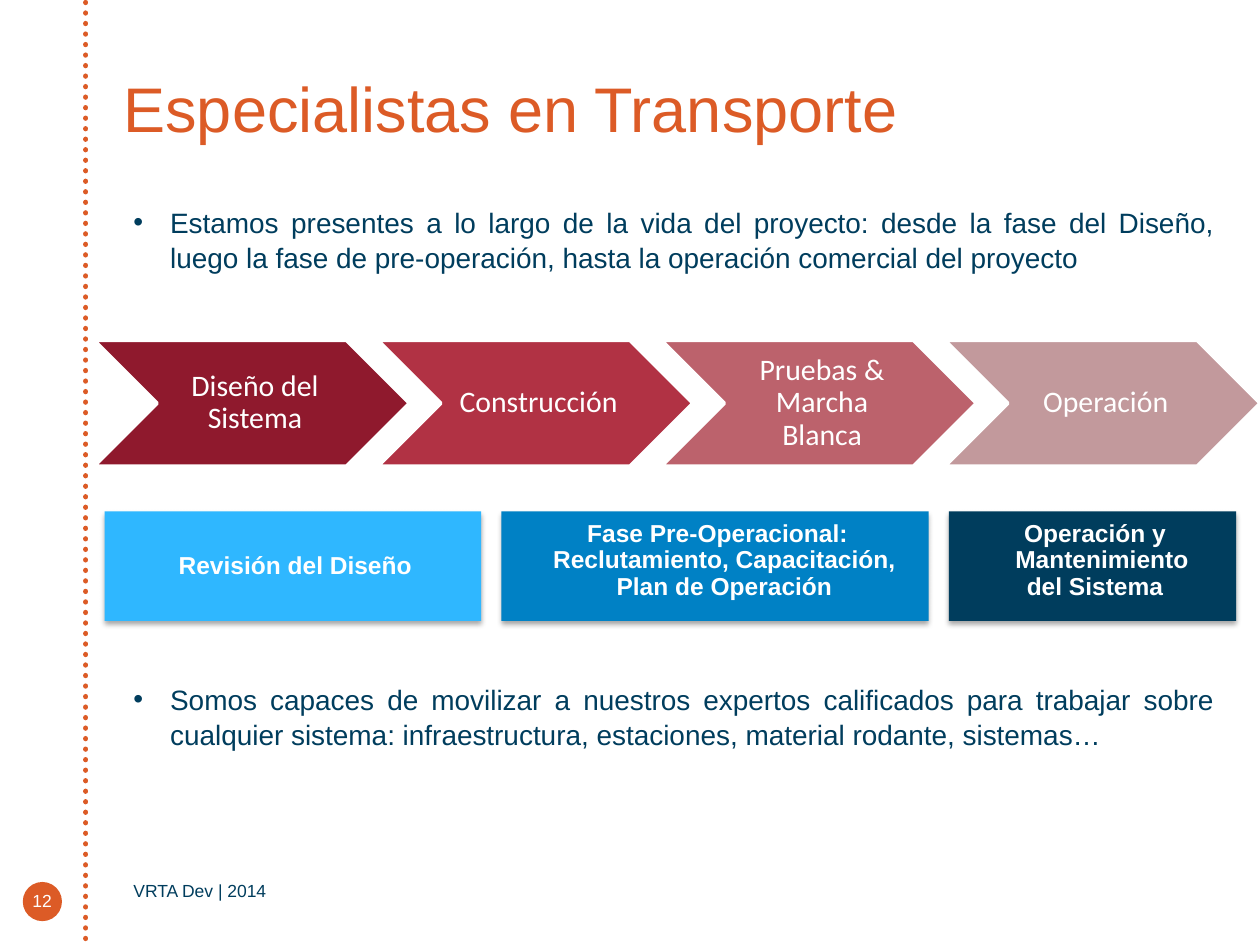
from lxml import etree
from pptx import Presentation
from pptx import util as u
from pptx.dml.color import RGBColor
from pptx.enum import dml, shapes, text
from pptx.oxml import parse_xml
from pptx.oxml.ns import nsdecls, qn

ORANGE = RGBColor(0xDC, 0x5B, 0x26)
NAVY = RGBColor(0x00, 0x3D, 0x5D)
BLUE = RGBColor(0x00, 0x81, 0xC5)
SKY = RGBColor(0x2F, 0xB7, 0xFF)
WHITE = RGBColor(0xFF, 0xFF, 0xFF)
CRIMSON = RGBColor(0x8F, 0x19, 0x2D)
RED = RGBColor(0xB1, 0x32, 0x44)
ROSE = RGBColor(0xBC, 0x62, 0x6C)
DUSTY_PINK = RGBColor(0xC2, 0x99, 0x9C)

STAGES = [
    ("Diseño del Sistema", CRIMSON),
    ("Construcción", RED),
    ("Pruebas & Marcha Blanca", ROSE),
    ("Operación", DUSTY_PINK),
]
SERVICES = [
    (["Revisión del Diseño"], SKY, 7.59, text.MSO_ANCHOR.MIDDLE),
    (["Fase Pre-Operacional: Reclutamiento, Capacitación, Plan de Operación"],
     BLUE, 8.61, text.MSO_ANCHOR.TOP),
    (["Operación y Mantenimiento", "del Sistema"], NAVY, 5.79, text.MSO_ANCHOR.TOP),
]
SHADOW = (
    f'<a:effectLst {nsdecls("a")}><a:outerShdw blurRad="39370" dist="22860" '
    'dir="5400000" rotWithShape="0"><a:srgbClr val="000000">'
    '<a:alpha val="35000"/></a:srgbClr></a:outerShdw></a:effectLst>'
)


def place(shape, box):
    shape.left, shape.top, shape.width, shape.height = (u.Cm(value) for value in box)


def write(shape, lines, size, color, anchor, align, font="Arial", bold=False,
          insets=(0, 0, 0, 0), spacing=None, hanging=0):
    frame = shape.text_frame
    frame.word_wrap = True
    frame.auto_size = text.MSO_AUTO_SIZE.NONE
    frame.vertical_anchor = anchor
    frame.margin_left, frame.margin_top, frame.margin_right, frame.margin_bottom = (
        u.Cm(value) for value in insets)
    frame.text = "\n".join(lines)
    for paragraph in frame.paragraphs:
        if hanging:
            properties = paragraph._p.get_or_add_pPr()
            properties.set("marL", str(u.Cm(hanging)))
            properties.set("indent", str(-u.Cm(hanging)))
        paragraph.alignment = align
        paragraph.space_before = u.Pt(0)
        if spacing:
            paragraph.line_spacing = spacing
        paragraph.font.name = font
        paragraph.font.size = u.Pt(size)
        paragraph.font.bold = bold
        paragraph.font.color.rgb = color


def add_filled(slide, preset, box, color):
    shape = slide.shapes.add_shape(preset, *(u.Cm(value) for value in box))
    shape.shadow.inherit = False
    shape.fill.solid()
    shape.fill.fore_color.rgb = color
    shape.line.fill.background()
    return shape


def add_side_rule(slide, left, top, height):
    rule = slide.shapes.add_connector(
        shapes.MSO_CONNECTOR.STRAIGHT,
        u.Cm(left), u.Cm(top), u.Cm(left), u.Cm(top + height))
    rule.line.color.rgb = ORANGE
    rule.line.width = u.Pt(3)
    rule.line.dash_style = dml.MSO_LINE.ROUND_DOT
    properties = rule._element.spPr
    properties.find(qn("a:ln")).set("cap", "rnd")
    etree.SubElement(properties, qn("a:effectLst"))


def add_footer(slide, box):
    left, top, width, height = box
    badge_size, number_width, text_left = 0.79, 1.7, 2.69
    add_filled(slide, shapes.MSO_SHAPE.OVAL,
               (left + 0.46, top + 0.13, badge_size, badge_size), ORANGE)
    number = slide.shapes.add_textbox(0, 0, 0, 0)
    place(number, (left, top, number_width, height))
    write(number, ["12"], 10, WHITE, text.MSO_ANCHOR.MIDDLE, text.PP_ALIGN.CENTER)
    credit = slide.shapes.add_textbox(0, 0, 0, 0)
    place(credit, (left + text_left, top, width - text_left, height))
    write(credit, ["VRTA Dev | 2014"], 10, NAVY, text.MSO_ANCHOR.TOP,
          text.PP_ALIGN.LEFT, insets=(0, 0.1, 0, 0))


def fill_title(title, box):
    place(title, box)
    write(title, ["Especialistas en Transporte"], 36, ORANGE,
          text.MSO_ANCHOR.BOTTOM, text.PP_ALIGN.LEFT)


def fill_list(body, box, line):
    place(body, box)
    write(body, [line], 16, NAVY, text.MSO_ANCHOR.TOP, text.PP_ALIGN.JUSTIFY,
          spacing=1.05, hanging=0.74)


def add_stages(slide, box):
    left, top, width, height = box
    overlap = 0.1
    stage_width = width / (len(STAGES) - overlap * (len(STAGES) - 1))
    for index, (label, color) in enumerate(STAGES):
        stage_left = left + index * stage_width * (1 - overlap)
        stage = add_filled(slide, shapes.MSO_SHAPE.CHEVRON,
                           (stage_left, top, stage_width, height), color)
        stage.line.color.rgb = WHITE
        stage.line.width = u.Pt(2)
        write(stage, [label], 17, WHITE, text.MSO_ANCHOR.MIDDLE,
              text.PP_ALIGN.CENTER, font="Calibri",
              insets=(0.18, 0.05, 0.05, 0.05), spacing=0.9)


def add_services(slide, box):
    left, top, width, height = box
    gap = (width - sum(service[2] for service in SERVICES)) / (len(SERVICES) - 1)
    for lines, color, service_width, anchor in SERVICES:
        service = add_filled(slide, shapes.MSO_SHAPE.RECTANGLE,
                             (left, top, service_width, height), color)
        properties = service._element.spPr
        properties.replace(properties.find(qn("a:effectLst")), parse_xml(SHADOW))
        write(service, lines, 14, WHITE, anchor, text.PP_ALIGN.CENTER, bold=True,
              insets=(0.3, 0.2, 0.2, 0.2), spacing=0.9, hanging=0.28)
        left += service_width + gap


def main():
    presentation = Presentation()
    presentation.slide_width = u.Cm(25.4)
    presentation.slide_height = u.Cm(19.05)
    slide = presentation.slides.add_slide(
        presentation.slide_layouts.get_by_name("Two Content"))
    add_side_rule(slide, 1.73, 0.05, 19.05)
    add_footer(slide, (0, 17.65, 18.49, 1.02))
    fill_title(slide.shapes.title, (2.49, 0.13, 21.41, 2.79))
    fill_list(slide.placeholders[1], (2.69, 4.11, 21.79, 2.01),
              "Estamos presentes a lo largo de la vida del proyecto: desde la fase "
              "del Diseño, luego la fase de pre-operación, hasta la operación "
              "comercial del proyecto")
    add_stages(slide, (1.9, 6.86, 23.5, 2.54))
    add_services(slide, (2.11, 10.31, 22.81, 2.21))
    fill_list(slide.placeholders[2], (2.69, 13.72, 21.79, 2.01),
              "Somos capaces de movilizar a nuestros expertos calificados para "
              "trabajar sobre cualquier sistema: infraestructura, estaciones, "
              "material rodante, sistemas…")
    presentation.save("out.pptx")


if __name__ == "__main__":
    main()
